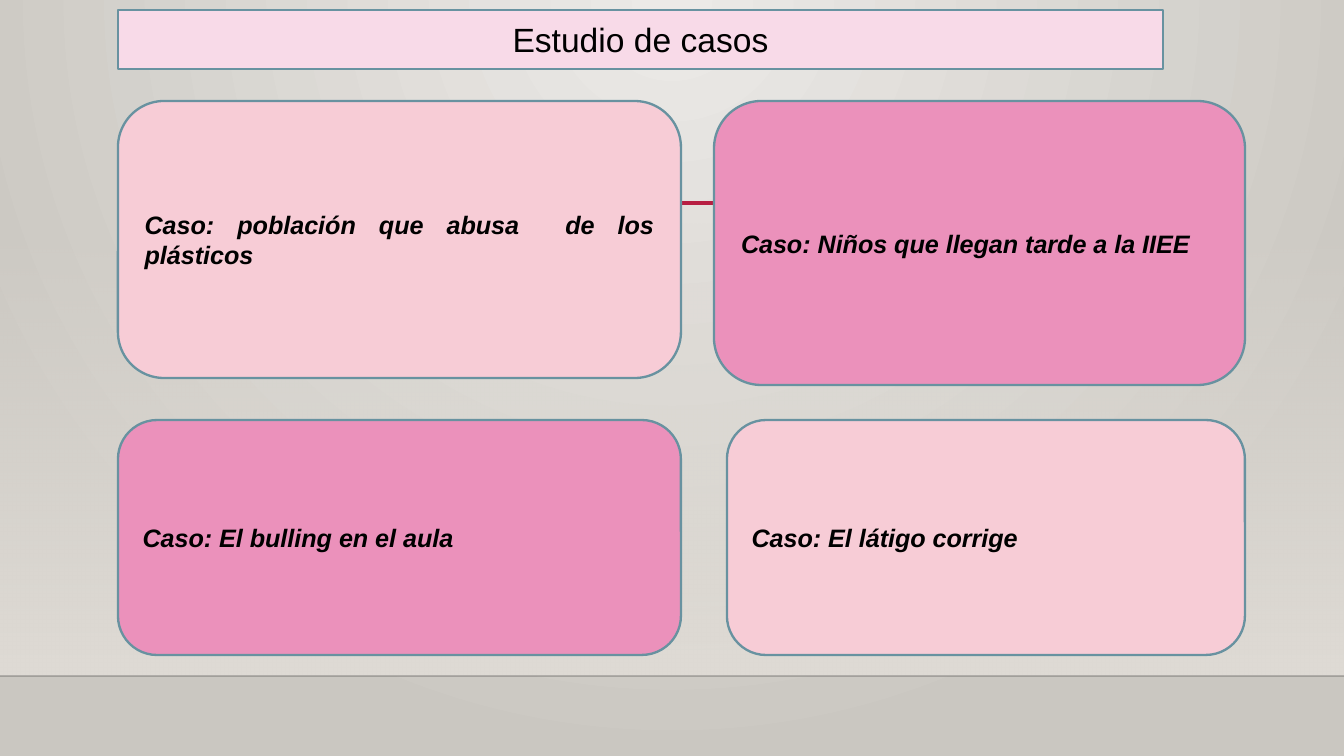
from dataclasses import dataclass

from pptx import Presentation
from pptx.dml.color import RGBColor
from pptx.enum.shapes import MSO_CONNECTOR, MSO_SHAPE
from pptx.enum.text import MSO_ANCHOR, PP_ALIGN
from pptx.oxml import parse_xml
from pptx.oxml.ns import nsdecls, qn
from pptx.oxml.xmlchemy import OxmlElement
from pptx.util import Pt

EMU_PER_PX = 914400 / 134.4
SLIDE_WIDTH, SLIDE_HEIGHT = 1344, 756
FLOOR_TOP = 676


@dataclass(frozen=True)
class Theme:
    font: str = "Arial"
    title_size: float = 18
    case_size: float = 13.5
    outline_width: float = 1.25
    text: str = "000000"
    outline: str = "6892A0"
    title_fill: str = "F8DAE8"
    pale_pink: str = "F7CCD6"
    deep_pink: str = "EB91BB"
    accent: str = "B71E42"
    floor_edge: str = "000001"
    glow: str = "ECEAE7"
    backdrop: str = "CAC7C1"
    wall: str = "DFDBD5"


THEME = Theme()

# text, fill, (left, top, width, height)
CASES = [
    ("Caso: población que abusa  de los plásticos", THEME.pale_pink, (118, 101, 563, 277)),
    ("Caso: El bulling en el aula", THEME.deep_pink, (118, 420, 563, 235)),
    ("Caso: Niños que llegan tarde a la IIEE", THEME.deep_pink, (714, 101, 531, 284)),
    ("Caso: El látigo corrige", THEME.pale_pink, (727, 420, 518, 235)),
]


def px(length):
    return round(length * EMU_PER_PX)


def color(value):
    return RGBColor.from_string(value)


def set_alpha(color_element, percent):
    alpha = OxmlElement("a:alpha")
    alpha.set("val", str(percent * 1000))
    color_element.append(alpha)


def fill_gradient(fill, start, end):
    fill.gradient()
    for stop, value in zip(fill.gradient_stops, (start, end)):
        stop.color.rgb = color(value)


def paint_background(slide):
    """Fill the slide with a glow that spreads from the top centre."""
    fill_gradient(slide.background.fill, THEME.glow, THEME.backdrop)
    gradient = slide.element.find(".//" + qn("a:gradFill"))
    radial = parse_xml(
        f'<a:path {nsdecls("a")} path="circle">'
        '<a:fillToRect l="43000" t="0" r="43000" b="100000"/></a:path>'
    )
    gradient.replace(gradient.find(qn("a:lin")), radial)


def add_box(slide, kind, box):
    shape = slide.shapes.add_shape(kind, *map(px, box))
    shape.shadow.inherit = False
    return shape


def add_wall(slide):
    """Add the band that fades in from clear down to the floor edge."""
    shape = add_box(slide, MSO_SHAPE.RECTANGLE, (0, 223, SLIDE_WIDTH, FLOOR_TOP - 223))
    shape.line.fill.background()
    fill_gradient(shape.fill, THEME.wall, THEME.wall)
    shape.fill.gradient_angle = 270
    set_alpha(shape.element.find(".//" + qn("a:srgbClr")), 0)


def add_rule(slide, left, right, top, line_color, width, opacity=100):
    line = slide.shapes.add_connector(
        MSO_CONNECTOR.STRAIGHT, px(left), px(top), px(right), px(top)
    )
    line.line.color.rgb = color(line_color)
    line.line.width = Pt(width)
    if opacity < 100:
        set_alpha(line.element.spPr.find(".//" + qn("a:srgbClr")), opacity)
    line.element.spPr.append(OxmlElement("a:effectLst"))


def write_text(shape, text, size, align, bold=False, italic=False):
    frame = shape.text_frame
    frame.word_wrap = True
    frame.vertical_anchor = MSO_ANCHOR.MIDDLE
    paragraph = frame.paragraphs[0]
    paragraph.alignment = align
    run = paragraph.add_run()
    run.text = text
    run.font.name = THEME.font
    run.font.size = Pt(size)
    run.font.bold = bold
    run.font.italic = italic
    run.font.color.rgb = color(THEME.text)


def add_panel(slide, kind, box, fill):
    shape = add_box(slide, kind, box)
    shape.fill.solid()
    shape.fill.fore_color.rgb = color(fill)
    shape.line.color.rgb = color(THEME.outline)
    shape.line.width = Pt(THEME.outline_width)
    return shape


def main():
    presentation = Presentation()
    presentation.slide_width = px(SLIDE_WIDTH)
    presentation.slide_height = px(SLIDE_HEIGHT)
    slide = presentation.slides.add_slide(presentation.slide_layouts[6])

    paint_background(slide)
    add_wall(slide)
    add_rule(slide, 0, SLIDE_WIDTH, FLOOR_TOP, THEME.floor_edge, 1, opacity=20)
    add_rule(slide, 160, 1219, 203, THEME.accent, 2.5)

    title = add_panel(slide, MSO_SHAPE.RECTANGLE, (118, 10, 1045, 59), THEME.title_fill)
    write_text(title, "Estudio de casos", THEME.title_size, PP_ALIGN.CENTER)
    for text, fill, box in CASES:
        panel = add_panel(slide, MSO_SHAPE.ROUNDED_RECTANGLE, box, fill)
        write_text(panel, text, THEME.case_size, PP_ALIGN.JUSTIFY, bold=True, italic=True)

    presentation.save("out.pptx")


if __name__ == "__main__":
    main()
